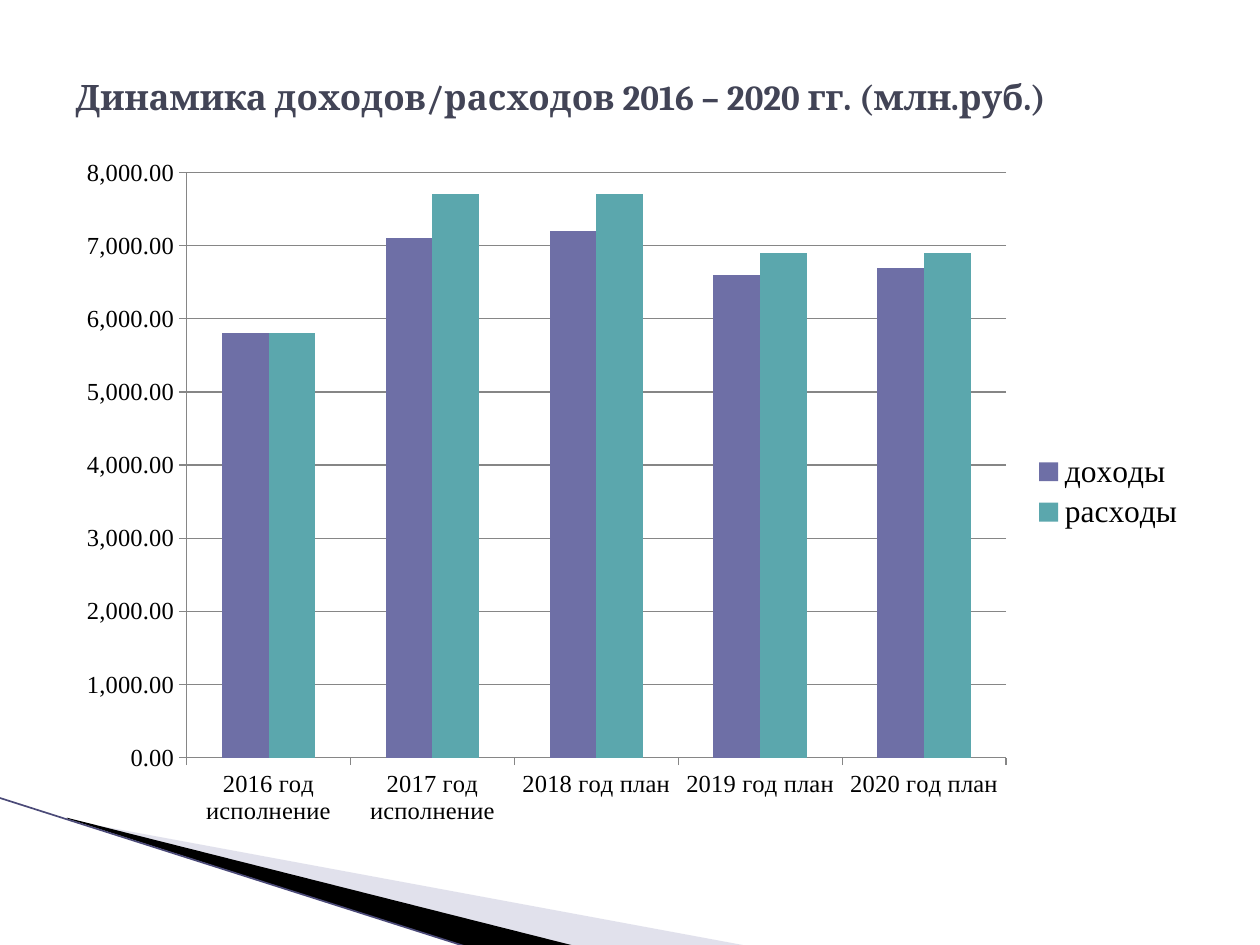
from lxml import etree
from pptx import Presentation
from pptx import util as u
from pptx.chart import data as chart_data
from pptx.dml import color
from pptx.enum import chart as chart_enum
from pptx.enum import shapes, text
from pptx.oxml import ns

COLORS = {
    "title": "424456",
    "text": "000000",
    "income": "6E6FA6",
    "expenses": "5BA7AD",
    "grid": "868686",
    "wedge_light": "B6B6D1",
    "wedge_dark": "000000",
    "edge": "4B4A78",
}


class SlideBuilder:
    """Holds the style and the current slide, and adds elements measured in points."""

    heading_font = "Cambria"
    chart_font = "Times New Roman"

    def __init__(self, slide):
        self.slide = slide

    def rgb(self, name):
        return color.RGBColor.from_string(COLORS[name])

    def style_font(self, font, name, size, color_name, bold=False):
        font.name, font.size, font.bold = name, u.Pt(size), bold
        font.color.rgb = self.rgb(color_name)

    def title(self, wording, left, top, width, height):
        shape = self.slide.shapes.title
        shape.left, shape.top = u.Pt(left), u.Pt(top)
        shape.width, shape.height = u.Pt(width), u.Pt(height)
        frame = shape.text_frame
        frame.text = wording
        frame.auto_size = text.MSO_AUTO_SIZE.NONE
        frame.vertical_anchor = text.MSO_ANCHOR.MIDDLE
        paragraph = frame.paragraphs[0]
        paragraph.alignment = text.PP_ALIGN.LEFT
        self.style_font(paragraph.runs[0].font, self.heading_font, 20, "title", True)

    def wedge(self, points, color_name, opacity=100):
        start, *rest = [(u.Pt(x), u.Pt(y)) for x, y in points]
        builder = self.slide.shapes.build_freeform(*start)
        builder.add_line_segments(rest, close=True)
        shape = builder.convert_to_shape()
        shape.shadow.inherit = False
        shape.fill.solid()
        shape.fill.fore_color.rgb = self.rgb(color_name)
        shape.line.fill.background()
        if opacity < 100:
            fill_color = shape.fill._xPr.find(".//" + ns.qn("a:srgbClr"))
            etree.SubElement(fill_color, ns.qn("a:alpha"), val=str(opacity * 1000))

    def line(self, start, end, color_name, width):
        points = [u.Pt(value) for value in (*start, *end)]
        connector = self.slide.shapes.add_connector(shapes.MSO_CONNECTOR.STRAIGHT, *points)
        connector.line.color.rgb = self.rgb(color_name)
        connector.line.width = u.Pt(width)
        etree.SubElement(connector._element.spPr, ns.qn("a:effectLst"))

    def column_chart(self, categories, series, box, maximum, step):
        data = chart_data.CategoryChartData(number_format="#,##0.00")
        data.categories = categories
        for name, values, _ in series:
            data.add_series(name, values)
        chart = self.slide.shapes.add_chart(
            chart_enum.XL_CHART_TYPE.COLUMN_CLUSTERED, *[u.Pt(value) for value in box], data
        ).chart
        chart.has_title = False
        self.style_font(chart.font, self.chart_font, 18, "text")
        plot = chart.plots[0]
        plot.gap_width, plot.overlap, plot.vary_by_categories = 150, 0, False
        for drawn, (_, _, color_name) in zip(plot.series, series):
            drawn.format.fill.solid()
            drawn.format.fill.fore_color.rgb = self.rgb(color_name)
        for axis in (chart.category_axis, chart.value_axis):
            self.style_font(axis.tick_labels.font, self.chart_font, 14, "text")
            axis.major_tick_mark = chart_enum.XL_TICK_MARK.OUTSIDE
            axis.format.line.color.rgb = self.rgb("grid")
        axis = chart.value_axis
        axis.minimum_scale, axis.maximum_scale, axis.major_unit = 0, maximum, step
        axis.tick_labels.number_format = "#,##0.00"
        axis.tick_labels.number_format_is_linked = False
        axis.major_gridlines.format.line.color.rgb = self.rgb("grid")
        chart.has_legend = True
        chart.legend.position = chart_enum.XL_LEGEND_POSITION.RIGHT
        chart.legend.include_in_layout = False
        self.style_font(chart.legend.font, self.chart_font, 18, "text")


def main():
    presentation = Presentation()
    presentation.slide_width, presentation.slide_height = u.Pt(720), u.Pt(540)
    builder = SlideBuilder(presentation.slides.add_slide(presentation.slide_layouts[5]))
    builder.wedge([(39.6, 468.7), (428.4, 540.7), (328.3, 540.7), (39.6, 468)], "wedge_light", 40)
    builder.wedge([(38.2, 467.3), (329, 540.7), (267.8, 541.4), (38.9, 468)], "wedge_dark")
    builder.line((-0.7, 455.8), (267.8, 541.4), "edge", 0.95)
    builder.column_chart(
        categories=["2016 год исполнение", "2017 год исполнение",
                    "2018 год план", "2019 год план", "2020 год план"],
        series=[
            ("доходы", (5800, 7100, 7200, 6600, 6700), "income"),
            ("расходы", (5800, 7700, 7700, 6900, 6900), "expenses"),
        ],
        box=(36.7, 82.8, 648, 396.7),
        maximum=8000,
        step=1000,
    )
    builder.title("Динамика доходов/расходов 2016 – 2020 гг. (млн.руб.)", 36, 21.6, 641.5, 67)
    presentation.save("out.pptx")


if __name__ == "__main__":
    main()
